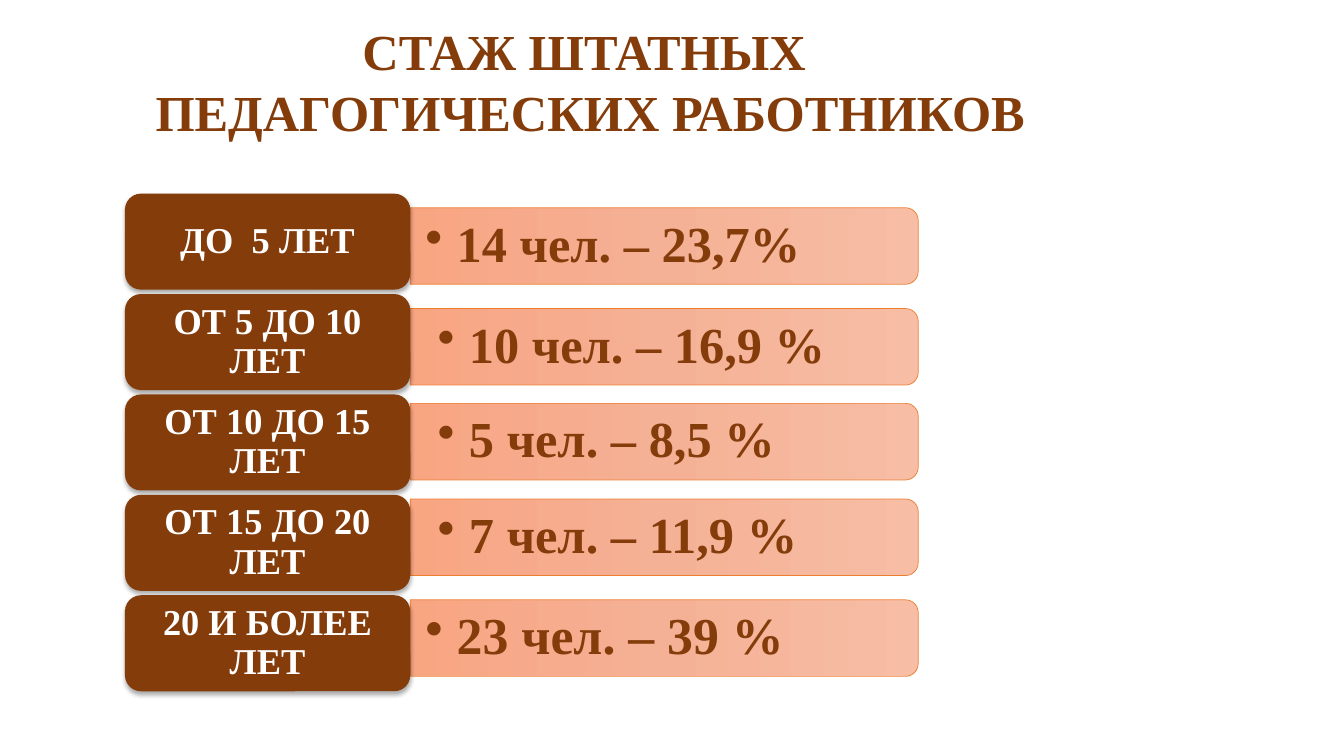
from lxml.etree import SubElement
from pptx import Presentation
from pptx.dml.color import RGBColor
from pptx.enum.shapes import MSO_SHAPE as Shape
from pptx.enum.text import MSO_ANCHOR as Anchor, MSO_AUTO_SIZE as AutoSize, PP_ALIGN as Align
from pptx.oxml import parse_xml
from pptx.oxml.ns import nsdecls, qn
from pptx.util import Cm, Pt

# Content: period, staff share, share size, bar shift and text inset (cm)
TITLE = "СТАЖ ШТАТНЫХ \vПЕДАГОГИЧЕСКИХ РАБОТНИКОВ"
PERIODS = [
    ("ДО  5 ЛЕТ", "14 чел. – 23,7%", 36, 0.11, 0.38),
    ("ОТ 5 ДО 10 ЛЕТ", "10 чел. – 16,9 %", 36, 0.12, 0.69),
    ("ОТ 10 ДО 15 ЛЕТ", "5 чел. – 8,5 %", 36, -0.02, 0.69),
    ("ОТ 15 ДО 20 ЛЕТ", "7 чел. – 11,9 %", 36, -0.14, 0.69),
    ("20 И БОЛЕЕ ЛЕТ", "23 чел. – 39 %", 37, -0.13, 0.38),
]


class Theme:
    font = "Times New Roman"
    brown = "843C0B"
    white = "FFFFFF"
    bar_line = "ED7D31"
    bar_stops = [(0, "F7BDA5"), (50, "F5B196"), (100, "F8A582")]
    title_size = 36
    label_size = 26


# Layout in cm
LABEL_LEFT, LABEL_TOP, LABEL_W, LABEL_H, PITCH = 3.15, 4.88, 7.19, 2.42, 2.53
BAR_LEFT, BAR_W, BAR_H = 10.34, 12.8, 1.93
SHARE_W, SHARE_H, BULLET_INDENT = 12.7, 1.75, 0.79


def style(paragraph, size, color):
    for run in paragraph.runs:
        run.font.name = Theme.font
        run.font.size = Pt(size)
        run.font.bold = True
        run.font.color.rgb = RGBColor.from_string(color)


def set_insets(frame, side, vertical):
    frame.margin_left = frame.margin_right = Cm(side)
    frame.margin_top = frame.margin_bottom = Cm(vertical)
    frame.word_wrap = True
    frame.vertical_anchor = Anchor.MIDDLE


def add_bar(slide, middle):
    """Bar turned by 90 degrees, so its rounded top faces right."""
    bar = slide.shapes.add_shape(
        Shape.ROUND_2_SAME_RECTANGLE,
        Cm(BAR_LEFT + (BAR_W - BAR_H) / 2), Cm(middle - BAR_W / 2), Cm(BAR_H), Cm(BAR_W))
    bar.rotation = 90
    bar.shadow.inherit = False
    bar.line.color.rgb = RGBColor.from_string(Theme.bar_line)
    bar.line.width = Pt(0.5)
    stops = "".join(f'<a:gs pos="{pos * 1000}"><a:srgbClr val="{color}"/></a:gs>'
                    for pos, color in Theme.bar_stops)
    bar.element.spPr.find(qn("a:prstGeom")).addnext(parse_xml(
        f'<a:gradFill {nsdecls("a")} rotWithShape="1"><a:gsLst>{stops}</a:gsLst>'
        '<a:lin ang="5400000" scaled="0"/></a:gradFill>'))


def add_share(slide, share, size, middle, inset):
    box = slide.shapes.add_textbox(
        Cm(BAR_LEFT), Cm(middle - SHARE_H / 2), Cm(SHARE_W), Cm(SHARE_H))
    frame = box.text_frame
    set_insets(frame, inset, inset / 2)
    frame.text = share
    paragraph = frame.paragraphs[0]
    paragraph.level = 1
    paragraph.line_spacing = 0.9
    props = paragraph._p.get_or_add_pPr()
    props.set("marL", str(Cm(BULLET_INDENT)))
    props.set("indent", str(-Cm(BULLET_INDENT)))
    SubElement(props, qn("a:buChar")).set("char", "•")
    style(paragraph, size, Theme.brown)


def add_label(slide, period, top):
    label = slide.shapes.add_shape(
        Shape.ROUNDED_RECTANGLE, Cm(LABEL_LEFT), Cm(top), Cm(LABEL_W), Cm(LABEL_H))
    label.fill.solid()
    label.fill.fore_color.rgb = RGBColor.from_string(Theme.brown)
    label.line.fill.background()
    label.element.spPr.append(parse_xml(
        f'<a:effectLst {nsdecls("a")}><a:outerShdw blurRad="{Pt(3.5)}" dist="{Pt(2.2)}" '
        'dir="5400000" rotWithShape="0"><a:srgbClr val="000000"><a:alpha val="32000"/>'
        '</a:srgbClr></a:outerShdw></a:effectLst>'))
    frame = label.text_frame
    set_insets(frame, 0.28, 0.13)
    frame.text = period
    paragraph = frame.paragraphs[0]
    paragraph.alignment = Align.CENTER
    paragraph.line_spacing = 0.9
    style(paragraph, Theme.label_size, Theme.white)


def main():
    deck = Presentation()
    deck.slide_width, deck.slide_height = Cm(33.87), Cm(19.05)
    slide = deck.slides.add_slide(deck.slide_layouts[5])

    # Title
    title = slide.shapes.title
    title.left, title.top, title.width, title.height = Cm(-0.36), Cm(0.38), Cm(30.48), Cm(3.33)
    heading = title.text_frame
    heading.text = TITLE
    heading.word_wrap = True
    heading.vertical_anchor = Anchor.TOP
    heading.auto_size = AutoSize.SHAPE_TO_FIT_TEXT
    heading.paragraphs[0].alignment = Align.CENTER
    style(heading.paragraphs[0], Theme.title_size, Theme.brown)

    # One row per length of service
    for row, (period, share, size, shift, inset) in enumerate(PERIODS):
        top = LABEL_TOP + row * PITCH
        middle = top + LABEL_H / 2 + shift
        add_bar(slide, middle)
        add_share(slide, share, size, middle, inset)
        add_label(slide, period, top)

    deck.save("out.pptx")


if __name__ == "__main__":
    main()
